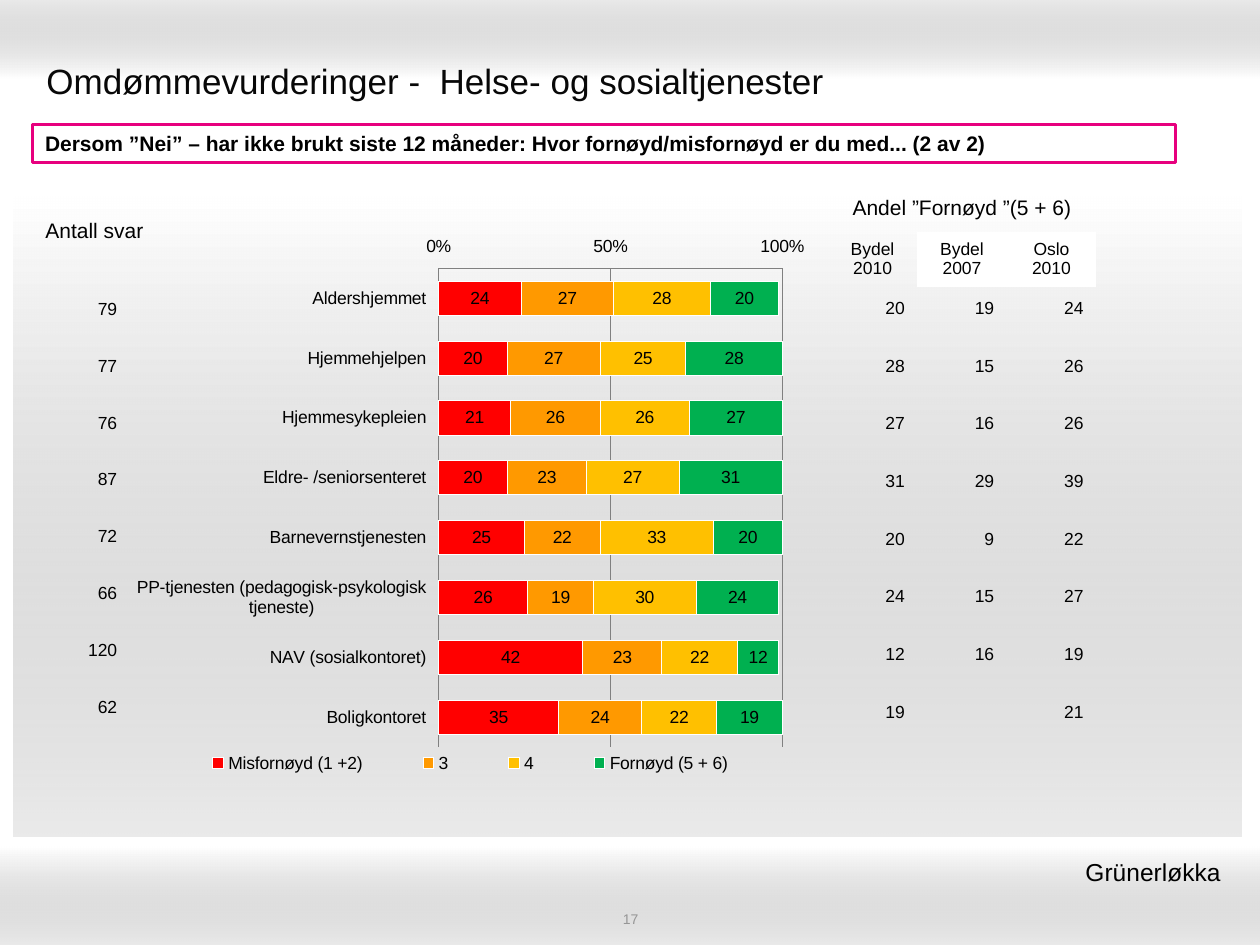
from dataclasses import dataclass
from typing import Any, Optional

from lxml import etree
from pptx import Presentation
from pptx.chart.data import CategoryChartData
from pptx.dml.color import RGBColor
from pptx.enum.chart import XL_CHART_TYPE, XL_LEGEND_POSITION, XL_TICK_LABEL_POSITION, XL_TICK_MARK
from pptx.enum.shapes import MSO_SHAPE
from pptx.enum.text import MSO_ANCHOR, PP_ALIGN
from pptx.oxml import parse_xml
from pptx.oxml.ns import nsdecls, qn
from pptx.util import Inches, Pt

RECTANGLE = MSO_SHAPE.RECTANGLE
STACKED_BARS = XL_CHART_TYPE.BAR_STACKED
LEGEND_BOTTOM = XL_LEGEND_POSITION.BOTTOM
LABELS_LOW = XL_TICK_LABEL_POSITION.LOW
TICK_NONE, TICK_INSIDE = XL_TICK_MARK.NONE, XL_TICK_MARK.INSIDE
TOP, MIDDLE = MSO_ANCHOR.TOP, MSO_ANCHOR.MIDDLE
LEFT, CENTER, RIGHT = PP_ALIGN.LEFT, PP_ALIGN.CENTER, PP_ALIGN.RIGHT

BLACK = RGBColor(0, 0, 0)
TITLE_BLACK = RGBColor(0x08, 0x08, 0x08)
WHITE = RGBColor(0xFF, 0xFF, 0xFF)
BAND_GREY = RGBColor(0x99, 0x99, 0x99)
NUMBER_GREY = RGBColor(0x96, 0x96, 0x96)
AXIS_GREY = RGBColor(0x80, 0x80, 0x80)
MAGENTA = RGBColor(0xE7, 0x00, 0x7E)
RED = RGBColor(0xFF, 0, 0)
ORANGE = RGBColor(0xFF, 0x99, 0)
YELLOW = RGBColor(0xFF, 0xC0, 0)
GREEN = RGBColor(0, 0xB0, 0x50)

FONT = "Arial"
NO_TABLE_STYLE = "{2D5ABB26-0587-4C30-8999-92F81FD0307C}"


@dataclass
class Box:
    left: float
    top: float
    width: float
    height: float

    def lengths(self) -> list:
        return [Inches(v) for v in (self.left, self.top, self.width, self.height)]


@dataclass
class Band:
    box: Box
    angle: int


@dataclass
class Caption:
    text: str
    box: Box
    size: int
    color: RGBColor = BLACK
    align: Any = LEFT
    anchor: Any = MIDDLE


@dataclass
class Rating:
    name: str
    color: RGBColor
    shares: tuple


@dataclass
class Service:
    name: str
    answers: int
    satisfied: tuple


BANDS = [
    Band(Box(0, 0, 10, 0.62), 90),
    Band(Box(0, 6.72, 10, 0.78), 270),
    Band(Box(0.11, 1.56, 9.74, 5.08), 270),
]
CAPTIONS = [
    Caption("Omdømmevurderinger -  Helse- og sosialtjenester", Box(0.27, 0.36, 9.45, 0.55), 20, TITLE_BLACK),
    Caption("17", Box(3.42, 7.22, 3.17, 0.14), 8, NUMBER_GREY, CENTER),
    Caption("Grünerløkka ", Box(6.1, 6.75, 3.74, 0.34), 14, BLACK, RIGHT, TOP),
]
QUESTION = Caption(
    "Dersom ”Nei” – har ikke brukt siste 12 måneder: Hvor fornøyd/misfornøyd er du med... (2 av 2)",
    Box(0.26, 0.99, 9.07, 0.3), 12)
RATINGS = [
    Rating("Misfornøyd (1 +2)", RED, (24, 20, 21, 20, 25, 26, 42, 35)),
    Rating("3", ORANGE, (27, 27, 26, 23, 22, 19, 23, 24)),
    Rating("4", YELLOW, (28, 25, 26, 27, 33, 30, 22, 22)),
    Rating("Fornøyd (5 + 6)", GREEN, (20, 28, 27, 31, 20, 24, 12, 19)),
]
SERVICES = [
    Service("Aldershjemmet", 79, (20, 19, 24)),
    Service("Hjemmehjelpen", 77, (28, 15, 26)),
    Service("Hjemmesykepleien", 76, (27, 16, 26)),
    Service("Eldre- /seniorsenteret", 87, (31, 29, 39)),
    Service("Barnevernstjenesten", 72, (20, 9, 22)),
    Service("PP-tjenesten (pedagogisk-psykologisk tjeneste)", 66, (24, 15, 27)),
    Service("NAV (sosialkontoret)", 120, (12, 16, 19)),
    Service("Boligkontoret", 62, (19, None, 21)),
]


def apply(target: Any, values: dict) -> None:
    for name, value in values.items():
        setattr(target, name, value)


def set_font(font: Any, size: int, color: RGBColor = BLACK, bold: bool = False) -> None:
    apply(font, {"name": FONT, "size": Pt(size), "bold": bold})
    font.color.rgb = color


def write(frame: Any, text: str, size: int, color: RGBColor, align: Any, bold: bool = False) -> None:
    frame.text = text
    for paragraph in frame.paragraphs:
        paragraph.alignment = align
        set_font(paragraph.font, size, color, bold)


def add_band(shapes: Any, band: Band) -> None:
    shape = shapes.add_shape(RECTANGLE, *band.box.lengths())
    shape.shadow.inherit = False
    shape.line.fill.background()
    shape.fill.gradient()
    shape.fill.gradient_angle = band.angle
    for stop, color in zip(shape.fill.gradient_stops, (WHITE, BAND_GREY)):
        stop.color.rgb = color
    grey = list(shape.element.iter(qn("a:srgbClr")))[-1]
    etree.SubElement(grey, qn("a:alpha")).set("val", "20000")


def add_caption(shapes: Any, caption: Caption) -> None:
    frame = shapes.add_textbox(*caption.box.lengths()).text_frame
    apply(frame, {"word_wrap": True, "vertical_anchor": caption.anchor})
    write(frame, caption.text, caption.size, caption.color, caption.align)


def add_question(shapes: Any, question: Caption) -> None:
    shape = shapes.add_shape(RECTANGLE, *question.box.lengths())
    shape.shadow.inherit = False
    shape.fill.solid()
    shape.fill.fore_color.rgb = WHITE
    shape.line.color.rgb = MAGENTA
    shape.line.width = Pt(2)
    apply(shape.text_frame, {"word_wrap": True, "vertical_anchor": question.anchor})
    write(shape.text_frame, question.text, question.size, question.color, question.align, bold=True)


def place(element: Any, index: int, area: Box) -> None:
    for layout in element.findall(qn("c:layout")):
        element.remove(layout)
    mode = '<c:layoutTarget val="inner"/>' if index == 0 else ""
    element.insert(index, parse_xml(
        f'<c:layout {nsdecls("c")}><c:manualLayout>{mode}'
        '<c:xMode val="edge"/><c:yMode val="edge"/>'
        f'<c:x val="{area.left}"/><c:y val="{area.top}"/>'
        f'<c:w val="{area.width}"/><c:h val="{area.height}"/>'
        '</c:manualLayout></c:layout>'))


def add_rating_chart(shapes: Any, box: Box) -> None:
    data = CategoryChartData()
    data.categories = [service.name for service in SERVICES]
    for rating in RATINGS:
        data.add_series(rating.name, rating.shares)
    chart = shapes.add_chart(STACKED_BARS, *box.lengths(), data).chart
    apply(chart, {"has_title": False, "has_legend": True})
    set_font(chart.font, 10)
    apply(chart.legend, {"position": LEGEND_BOTTOM, "include_in_layout": False})
    plot = chart.plots[0]
    apply(plot, {"gap_width": 75, "overlap": 100, "vary_by_categories": False, "has_data_labels": True})
    apply(plot.data_labels, {"show_value": True, "number_format": "0", "number_format_is_linked": False})
    for series, rating in zip(plot.series, RATINGS):
        series.format.fill.solid()
        series.format.fill.fore_color.rgb = rating.color
        series.format.line.color.rgb = WHITE
    shared = {"tick_label_position": LABELS_LOW, "minor_tick_mark": TICK_NONE}
    apply(chart.category_axis, {**shared, "reverse_order": True, "major_tick_mark": TICK_NONE})
    apply(chart.value_axis, {
        **shared, "major_tick_mark": TICK_INSIDE, "minimum_scale": 0, "maximum_scale": 100,
        "major_unit": 50, "has_major_gridlines": True})
    apply(chart.value_axis.tick_labels, {"number_format": "General\\%", "number_format_is_linked": False})
    for part in (chart.category_axis, chart.value_axis, chart.value_axis.major_gridlines):
        part.format.line.color.rgb = AXIS_GREY
    place(chart.element.find(f'.//{qn("c:plotArea")}'), 0, Box(0.454, 0.075, 0.495, 0.837))
    place(chart.element.find(f'.//{qn("c:legend")}'), 1, Box(0.05, 0.91, 0.9, 0.06))


def add_grid(shapes: Any, rows: list, box: Box, align: Any, size: int = 10,
             heights: Optional[list] = None) -> Any:
    table = shapes.add_table(len(rows), len(rows[0]), *box.lengths()).table
    apply(table, {"first_row": False, "horz_banding": False})
    table._tbl.tblPr.find(qn("a:tableStyleId")).text = NO_TABLE_STYLE
    for row, height in zip(table.rows, heights or []):
        row.height = Inches(height)
    for r, values in enumerate(rows):
        for c, value in enumerate(values):
            cell = table.cell(r, c)
            cell.fill.background()
            cell.vertical_anchor = MIDDLE
            write(cell.text_frame, "" if value is None else str(value), size, BLACK, align)
    return table


def add_satisfied_header(shapes: Any) -> None:
    rows = [["Andel ”Fornøyd ”(5 + 6)", None, None], ["Bydel\n2010", "Bydel\n2007", "Oslo\n2010"]]
    table = add_grid(shapes, rows, Box(6.57, 1.47, 2.13, 0.8), CENTER, heights=[0.37, 0.43])
    heading = table.cell(0, 0)
    heading.merge(table.cell(0, 2))
    heading.text_frame.paragraphs[0].font.size = Pt(12)
    for column in (1, 2):
        fill = table.cell(1, column).fill
        fill.solid()
        fill.fore_color.rgb = WHITE


def main() -> None:
    presentation = Presentation()
    apply(presentation, {"slide_width": Inches(10), "slide_height": Inches(7.5)})
    shapes = presentation.slides.add_slide(presentation.slide_layouts[6]).shapes
    for band in BANDS:
        add_band(shapes, band)
    for caption in CAPTIONS:
        add_caption(shapes, caption)
    add_question(shapes, QUESTION)
    add_rating_chart(shapes, Box(0.98, 1.79, 5.51, 4.54))
    add_grid(shapes, [service.satisfied for service in SERVICES], Box(6.57, 2.22, 2.13, 3.66), RIGHT)
    add_satisfied_header(shapes)
    add_grid(shapes, [[service.answers] for service in SERVICES], Box(0.51, 2.23, 0.52, 3.61), RIGHT)
    add_grid(shapes, [["Antall svar"]], Box(0.04, 1.54, 1.42, 0.59), CENTER, 12)
    presentation.save("out.pptx")


if __name__ == "__main__":
    main()
